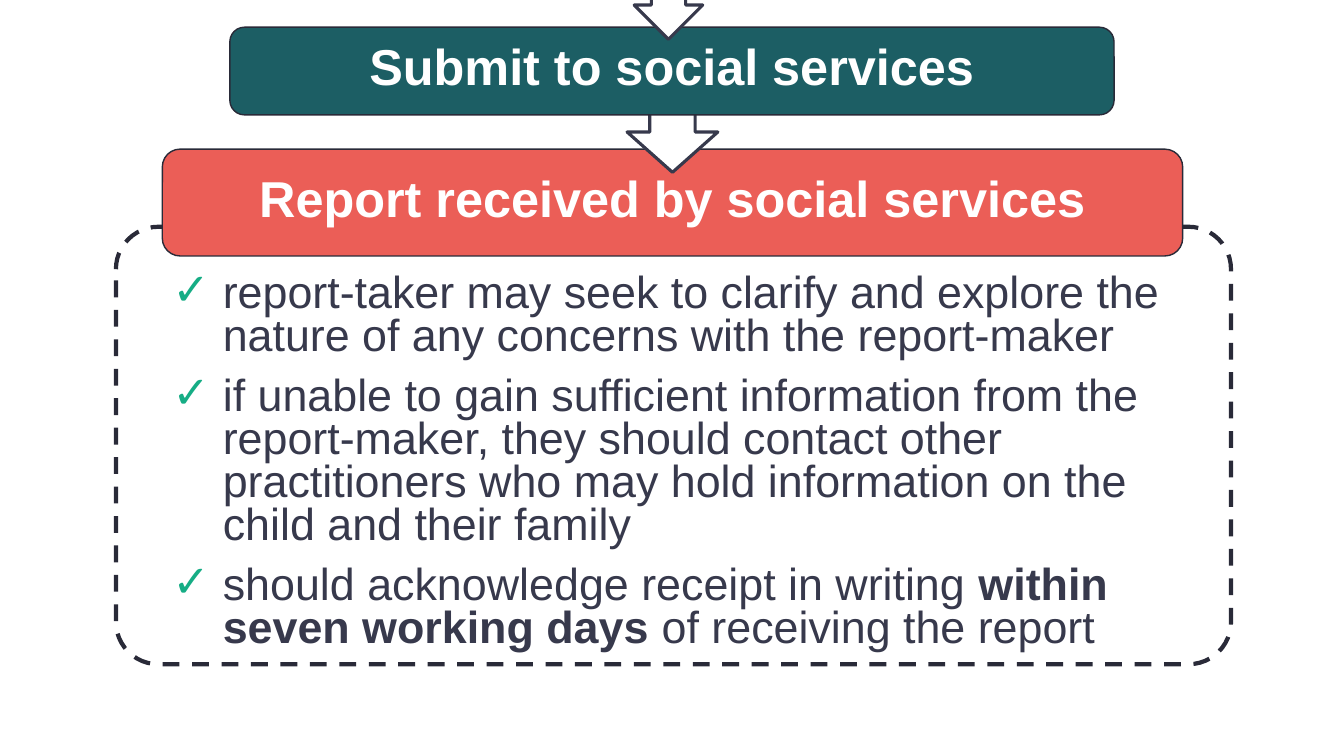
from dataclasses import dataclass

from lxml.etree import SubElement
from pptx import Presentation
from pptx.dml.color import RGBColor
from pptx.enum.dml import MSO_LINE
from pptx.enum.shapes import MSO_SHAPE as SHAPE
from pptx.enum.text import MSO_ANCHOR as ANCHOR, MSO_AUTO_SIZE as FIT, PP_ALIGN as ALIGN
from pptx.oxml.ns import qn
from pptx.util import Inches, Pt


@dataclass(frozen=True)
class Theme:
    """Colours, font and type sizes of the slide."""
    white: str = "FFFFFF"
    teal: str = "1C5E64"
    coral: str = "EB5E57"
    outline: str = "292A38"
    ink: str = "37394C"
    check: str = "16AD85"
    font: str = "Arial"
    heading: int = 36
    body: int = 32


THEME = Theme()
POINTS = [
    [("report-taker may seek to clarify and explore the nature of any "
      "concerns with the report-maker", False)],
    [("if unable to gain sufficient information from the report-maker, they "
      "should contact other practitioners who may hold information on the "
      "child and their family", False)],
    [("should acknowledge receipt in writing ", False),
     ("within seven working days ", True),
     ("of receiving the report", False)],
]


def add_block(slide, kind, box, fill, line, width):
    """Add a filled, outlined preset shape and return it."""
    s = slide.shapes.add_shape(kind, *map(Inches, box))
    s.shadow.inherit = False
    s.fill.solid()
    s.fill.fore_color.rgb = RGBColor.from_string(fill)
    s.line.color.rgb = RGBColor.from_string(line)
    s.line.width = Pt(width)
    return s


def add_run(p, text, size, color, bold=False):
    """Add a formatted run to a paragraph."""
    r = p.add_run()
    r.text = text
    r.font.name = THEME.font
    r.font.size = Pt(size)
    r.font.bold = bold
    r.font.color.rgb = RGBColor.from_string(color)


def write_heading(s, text):
    """Write a centred white heading in a shape."""
    tf = s.text_frame
    tf.word_wrap = True
    tf.auto_size = FIT.NONE
    tf.vertical_anchor = ANCHOR.MIDDLE
    p = tf.paragraphs[0]
    p.alignment = ALIGN.CENTER
    p.line_spacing = 0.8
    add_run(p, text, THEME.heading, THEME.white, bold=True)


def place(s, box):
    """Move a placeholder to a box, in front of the shapes drawn so far."""
    s.left, s.top, s.width, s.height = map(Inches, box)
    tree = s.element.getparent()
    tree.append(s.element)


def add_arrow(slide, center, top, width, height):
    """Add a white down arrow centred on a given x."""
    box = (center - width / 2, top, width, height)
    add_block(slide, SHAPE.DOWN_ARROW, box, THEME.white, THEME.ink, 2.25)


def add_step(slide, box, fill):
    """Add the rounded bar of one step."""
    return add_block(slide, SHAPE.ROUNDED_RECTANGLE, box, fill, THEME.outline, 1)


def add_frame(slide, box):
    """Add the dashed frame around the details."""
    s = add_block(slide, SHAPE.ROUNDED_RECTANGLE, box, THEME.white, THEME.outline, 3)
    s.adjustments[0] = 0.097
    s.line.dash_style = MSO_LINE.DASH


def add_check(p):
    """Give a paragraph a green check mark with a hanging indent."""
    pPr = p._p.get_or_add_pPr()
    pPr.set("marL", str(Inches(0.5)))
    pPr.set("indent", str(-Inches(0.5)))
    color = SubElement(pPr, qn("a:buClr"))
    SubElement(color, qn("a:srgbClr")).set("val", THEME.check)
    SubElement(pPr, qn("a:buFont")).set("typeface", THEME.font)
    SubElement(pPr, qn("a:buChar")).set("char", "✓")


def fill_list(s, box, points):
    """Fill the body placeholder with the checked points."""
    place(s, box)
    tf = s.text_frame
    tf.word_wrap = True
    tf.auto_size = FIT.NONE
    for i, runs in enumerate(points):
        p = tf.add_paragraph() if i else tf.paragraphs[0]
        add_check(p)
        p.line_spacing = 0.8
        p.space_before = Pt(0)
        p.space_after = Pt(12)
        for text, bold in runs:
            add_run(p, text, THEME.body, THEME.ink, bold)


def build_slide(prs):
    """Build the slide on social services receiving a report."""
    slide = prs.slides.add_slide(prs.slide_layouts[1])
    title, body = slide.placeholders
    center = 6.67
    received = (1.61, 1.48, 10.12, 1.06)

    add_frame(slide, (1.15, 2.25, 11.06, 4.34))
    add_step(slide, received, THEME.coral)
    add_arrow(slide, center, 0.91, 0.9, 0.8)
    submit = add_step(slide, (2.28, 0.27, 8.77, 0.87), THEME.teal)
    write_heading(submit, "Submit to social services")
    add_arrow(slide, center - 0.04, -0.42, 0.68, 0.81)

    place(title, received)
    write_heading(title, "Report received by social services")
    fill_list(body, (1.61, 2.67, 10.12, 3.9), POINTS)


def main():
    """Create and save the presentation."""
    prs = Presentation()
    prs.slide_width, prs.slide_height = Inches(13.33), Inches(7.5)
    build_slide(prs)
    prs.save("out.pptx")


if __name__ == "__main__":
    main()
